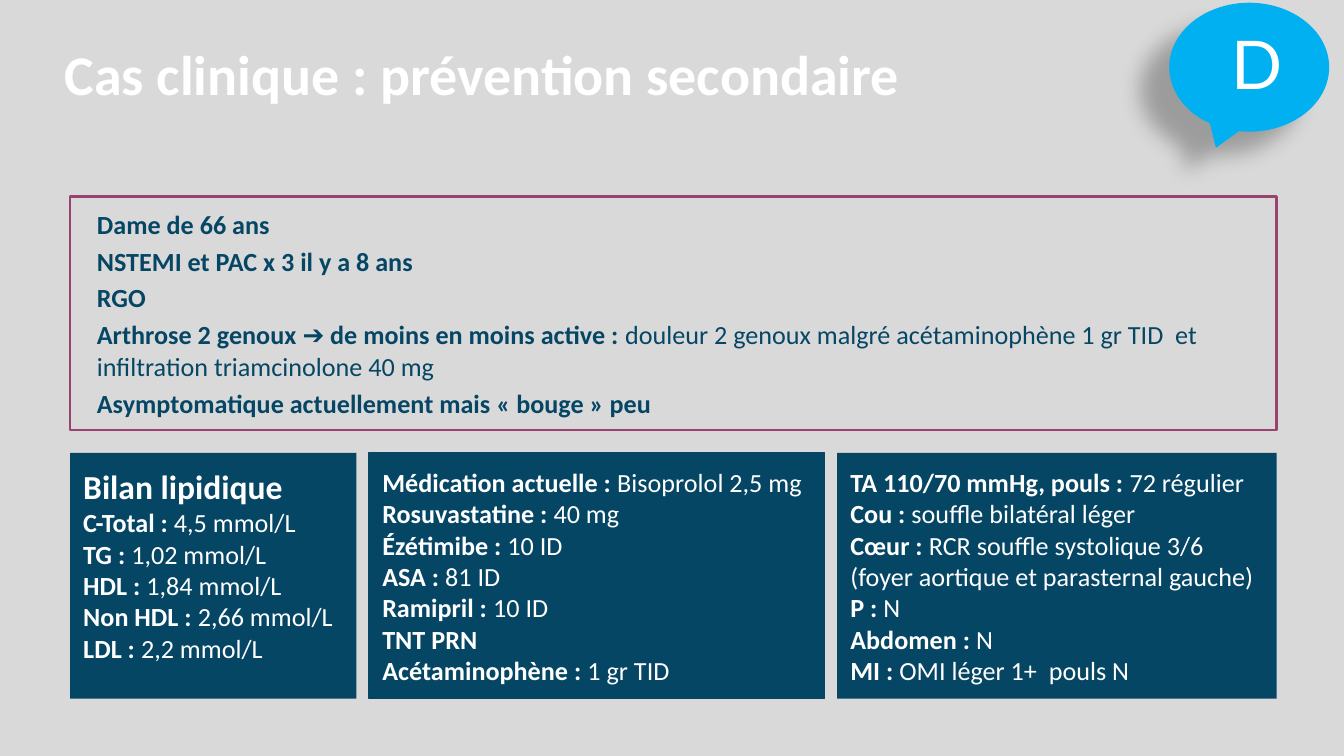
"""Build the slide of a clinical case in secondary prevention."""
from lxml import etree
from pptx import Presentation
from pptx.dml.color import RGBColor
from pptx.enum import shapes, text
from pptx.oxml import ns
from pptx.util import Pt

COLORS = {"background": "D9D9D9", "navy": "064665", "plum": "994371",
          "sky": "00B0F0", "white": "FFFFFF", "shadow": "000000"}
TITLE = "Cas clinique : prévention secondaire"
BADGE = "D"
HISTORY = [
    ("Dame de 66 ans", ""),
    ("NSTEMI et PAC x 3 il y a 8 ans", ""),
    ("RGO", ""),
    ("Arthrose 2 genoux ➔ de moins en moins active : ",
     "douleur 2 genoux malgré acétaminophène 1 gr TID  et infiltration triamcinolone 40 mg"),
    ("Asymptomatique actuellement mais « bouge » peu", ""),
]
LIPIDS = [
    ("Bilan lipidique", ""),
    ("C-Total : ", "4,5 mmol/L"),
    ("TG : ", "1,02 mmol/L"),
    ("HDL : ", "1,84 mmol/L"),
    ("Non HDL : ", "2,66 mmol/L"),
    ("LDL : ", "2,2 mmol/L"),
]
MEDICATION = [
    ("Médication actuelle : ", "Bisoprolol 2,5 mg"),
    ("Rosuvastatine : ", "40 mg"),
    ("Ézétimibe : ", "10 ID"),
    ("ASA : ", "81 ID"),
    ("Ramipril : ", "10 ID"),
    ("TNT PRN", ""),
    ("Acétaminophène : ", "1 gr TID"),
]
EXAM = [
    ("TA 110/70 mmHg, pouls : ", "72 régulier"),
    ("Cou : ", "souffle bilatéral léger"),
    ("Cœur : ", "RCR souffle systolique 3/6"),
    ("", "(foyer aortique et parasternal gauche)"),
    ("P : ", "N"),
    ("Abdomen : ", "N"),
    ("MI : ", "OMI léger 1+  pouls N"),
]
LEFT, GAP = 37.5, 6.75
PANELS = [(LIPIDS, 153.5, False, None), (MEDICATION, 244, True, "navy"),
          (EXAM, 235.5, False, None)]
PANEL_TOP, PANEL_HEIGHT = 242.6, 131.8


def rgb(name):
    return RGBColor.from_string(COLORS[name])


def style(font, size, color, bold=False, face="Calibri"):
    font.name, font.size, font.bold = face, Pt(size), bold
    font.color.rgb = rgb(color)


def set_margins(frame, left, top, right, bottom):
    frame.margin_left, frame.margin_top = Pt(left), Pt(top)
    frame.margin_right, frame.margin_bottom = Pt(right), Pt(bottom)


def shadow_effect(opacity, blur, distance, angle):
    effects = etree.Element(ns.qn("a:effectLst"))
    outer = etree.SubElement(effects, ns.qn("a:outerShdw"), blurRad=str(Pt(blur)),
                             dist=str(Pt(distance)), dir=str(angle * 60000),
                             algn="ctr", rotWithShape="0")
    color = etree.SubElement(outer, ns.qn("a:srgbClr"), val=COLORS["shadow"])
    etree.SubElement(color, ns.qn("a:alpha"), val=str(opacity * 1000))
    return effects


def add_shape(slide, kind, box, fill=None, line=None, width=0.75):
    shape = slide.shapes.add_shape(kind, *map(Pt, box))
    shape.shadow.inherit = False
    if fill:
        shape.fill.solid()
        shape.fill.fore_color.rgb = rgb(fill)
    else:
        shape.fill.background()
    if line:
        shape.line.color.rgb = rgb(line)
        shape.line.width = Pt(width)
    else:
        shape.line.fill.background()
    return shape


def write_entries(frame, entries, color, space=0):
    for index, (label, value) in enumerate(entries):
        paragraph = frame.paragraphs[0] if index == 0 else frame.add_paragraph()
        paragraph.alignment = text.PP_ALIGN.LEFT
        paragraph.space_before = Pt(space if index else 0)
        for words, bold in ((label, True), (value, False)):
            if words:
                run = paragraph.add_run()
                run.text = words
                style(run.font, 18 if words == LIPIDS[0][0] else 14, color, bold)


def add_title(slide):
    title = slide.shapes.title
    title.left, title.top, title.width, title.height = map(Pt, (34.6, 19.4, 671.8, 46))
    frame = title.text_frame
    frame.text = TITLE
    frame.auto_size = text.MSO_AUTO_SIZE.NONE
    frame.vertical_anchor = text.MSO_ANCHOR.MIDDLE
    set_margins(frame, 0, 3.6, 0, 3.6)
    paragraph = frame.paragraphs[0]
    paragraph.alignment, paragraph.line_spacing = text.PP_ALIGN.LEFT, 0.8
    font = paragraph.runs[0].font
    style(font, 30, "white", True)
    fill = paragraph.runs[0].font._element.find(ns.qn("a:solidFill"))
    fill.addnext(shadow_effect(60, 4, 4, 45))


def add_history(slide):
    box = (LEFT, 105.2, 646.5, 125.2)
    history = add_shape(slide, shapes.MSO_SHAPE.RECTANGLE, box, line="plum", width=1.5)
    frame = history.text_frame
    frame.word_wrap = True
    frame.vertical_anchor = text.MSO_ANCHOR.MIDDLE
    set_margins(frame, 14.4, 3.6, 7.2, 3.6)
    write_entries(frame, HISTORY, "navy", 3)


def add_panels(slide):
    left = LEFT
    for entries, width, wrap, line in PANELS:
        box = (left, PANEL_TOP, width, PANEL_HEIGHT)
        panel = add_shape(slide, shapes.MSO_SHAPE.RECTANGLE, box, "navy", line)
        frame = panel.text_frame
        frame.word_wrap = wrap
        frame.vertical_anchor = text.MSO_ANCHOR.TOP
        set_margins(frame, 7.2, 7.2, 7.2, 7.2)
        write_entries(frame, entries, "white")
        left += width + GAP


def add_badge(slide):
    bubble = add_shape(slide, shapes.MSO_SHAPE.OVAL_CALLOUT, (626.4, 1.5, 85.7, 69.1), "sky")
    properties = bubble._element.spPr
    plain = properties.find(ns.qn("a:effectLst"))
    properties.replace(plain, shadow_effect(28, 11.8, 19.7, 141))
    letter = slide.shapes.add_textbox(*map(Pt, (633.6, 8.6, 79.2, 51.1)))
    frame = letter.text_frame
    frame.word_wrap = True
    frame.text = BADGE
    frame.paragraphs[0].alignment = text.PP_ALIGN.CENTER
    style(frame.paragraphs[0].runs[0].font, 36, "white", face="Lato")


def main():
    deck = Presentation()
    deck.slide_width, deck.slide_height = Pt(720), Pt(405)
    slide = deck.slides.add_slide(deck.slide_layouts[5])
    slide.background.fill.solid()
    slide.background.fill.fore_color.rgb = rgb("background")
    add_title(slide)
    add_history(slide)
    add_panels(slide)
    add_badge(slide)
    deck.save("out.pptx")


if __name__ == "__main__":
    main()
